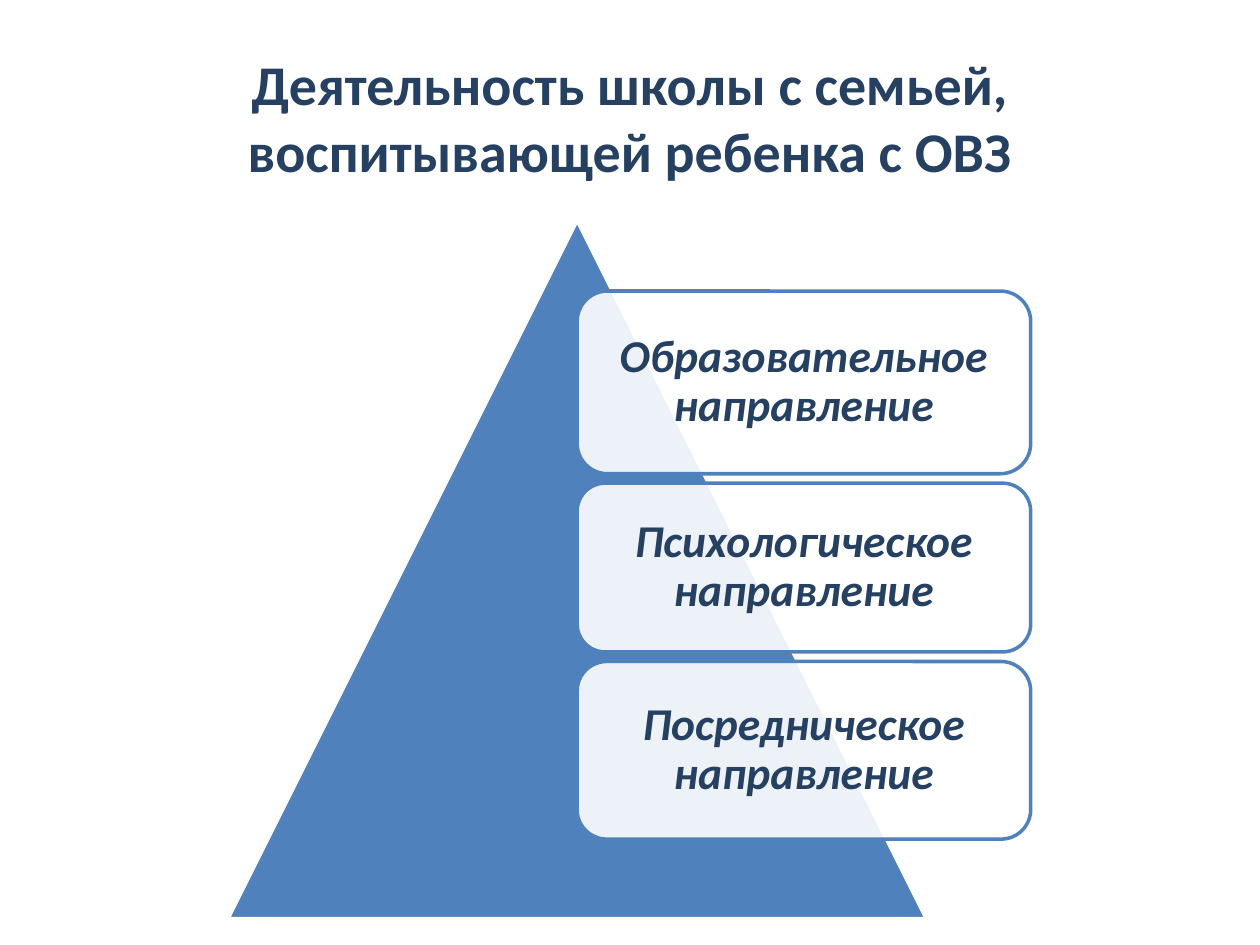
from dataclasses import dataclass

from lxml import etree
from pptx import Presentation
from pptx.dml.color import RGBColor
from pptx.enum.shapes import MSO_SHAPE as Shape
from pptx.enum.text import MSO_ANCHOR as Anchor, PP_ALIGN as Align
from pptx.oxml.ns import qn
from pptx.util import Pt


@dataclass(frozen=True)
class Theme:
    font: str = "Calibri"
    title_size: int = 32
    card_size: int = 26
    line_width: int = 2
    card_opacity: int = 90
    navy: RGBColor = RGBColor(0x25, 0x40, 0x61)
    blue: RGBColor = RGBColor(0x4F, 0x81, 0xBD)
    white: RGBColor = RGBColor(0xFF, 0xFF, 0xFF)


THEME = Theme()

TITLE = "Деятельность школы с семьей, воспитывающей ребенка с ОВЗ"
# Each direction with the height of its card
DIRECTIONS = [
    ("Образовательное направление", 104.4),
    ("Психологическое направление", 96.5),
    ("Посредническое направление", 101.5),
]
CARD_LEFT, CARD_TOP, CARD_WIDTH, CARD_GAP = 329.8, 166.3, 259.2, 5.4


def write_text(box, text, size, inset=None, italic=False, line_spacing=None):
    frame = box.text_frame
    frame.word_wrap = True
    frame.vertical_anchor = Anchor.MIDDLE
    if inset is not None:
        frame.margin_left = frame.margin_right = Pt(inset)
        frame.margin_top = frame.margin_bottom = Pt(inset)
    para = frame.paragraphs[0]
    para.text = text
    para.alignment = Align.CENTER
    para.line_spacing = line_spacing
    font = para.font
    font.name, font.size = THEME.font, Pt(size)
    font.bold, font.italic = True, italic
    font.color.rgb = THEME.navy


def add_shape(page, kind, left, top, width, height, fill, line):
    shape = page.shapes.add_shape(kind, Pt(left), Pt(top), Pt(width), Pt(height))
    shape.shadow.inherit = False
    shape.fill.solid()
    shape.fill.fore_color.rgb = fill
    shape.line.color.rgb = line
    shape.line.width = Pt(THEME.line_width)
    return shape


def set_opacity(shape, percent):
    color = shape.fill._xPr.find(qn("a:solidFill"))[0]
    etree.SubElement(color, qn("a:alpha"), val=str(percent * 1000))


def add_title(page, text):
    box = page.shapes.add_textbox(Pt(36), Pt(21.6), Pt(648), Pt(90))
    write_text(box, text, THEME.title_size)


def add_card(page, text, top, height):
    card = add_shape(page, Shape.ROUNDED_RECTANGLE, CARD_LEFT, top,
                     CARD_WIDTH, height, THEME.white, THEME.blue)
    set_opacity(card, THEME.card_opacity)
    write_text(card, text, THEME.card_size, inset=5, italic=True, line_spacing=0.9)


def main():
    deck = Presentation()
    deck.slide_width, deck.slide_height = Pt(720), Pt(540)
    page = deck.slides.add_slide(deck.slide_layouts[6])

    # Heading
    add_title(page, TITLE)

    # Pyramid behind the cards
    add_shape(page, Shape.ISOSCELES_TRIANGLE, 130.3, 126, 399, 399,
              THEME.blue, THEME.white)

    # Stacked direction cards
    top = CARD_TOP
    for text, height in DIRECTIONS:
        add_card(page, text, top, height)
        top += height + CARD_GAP

    deck.save("out.pptx")


if __name__ == "__main__":
    main()
